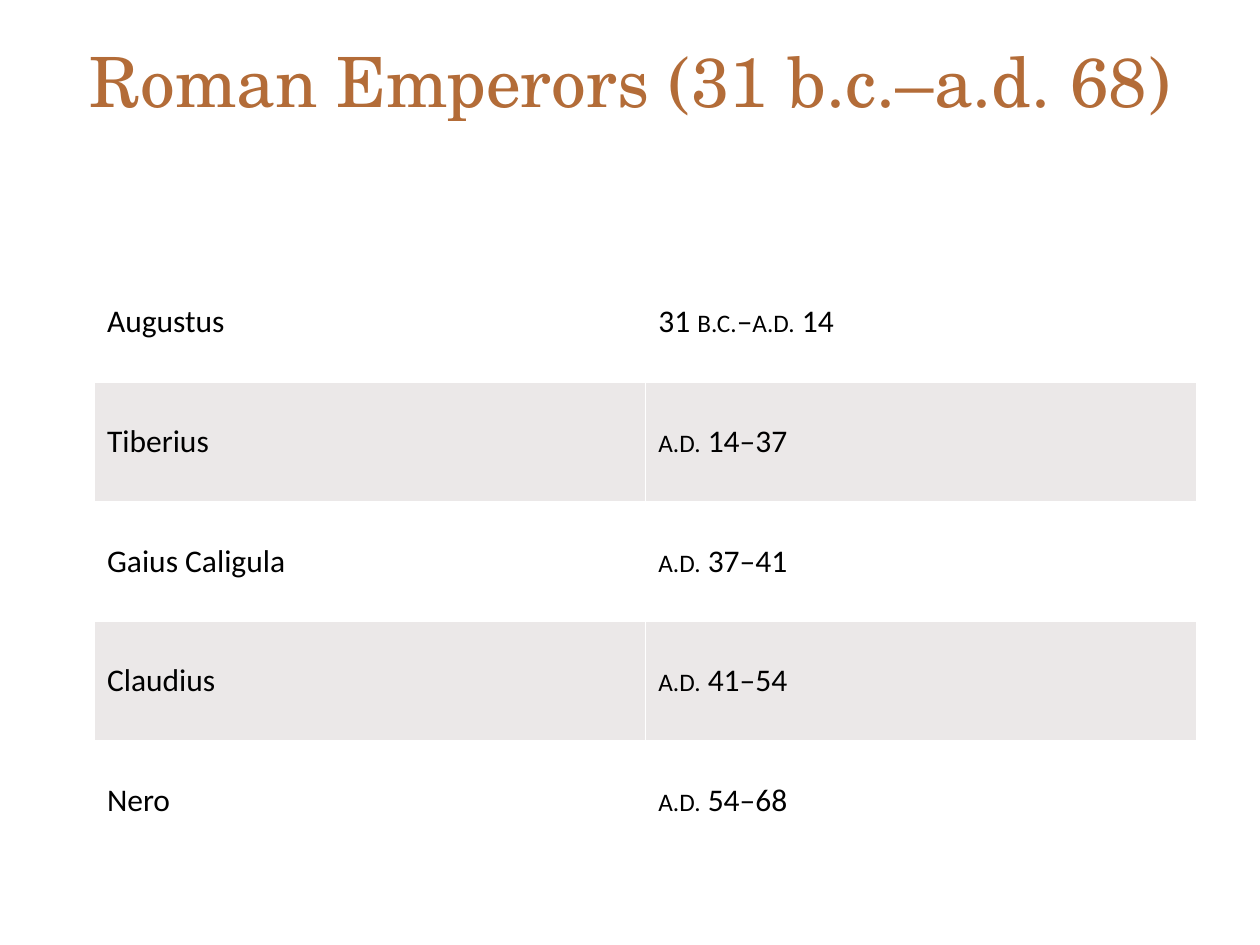
"""Build a slide listing the Roman emperors and their reigns."""
from dataclasses import dataclass

from pptx import Presentation
from pptx.dml.color import RGBColor
from pptx.enum import text
from pptx.util import Inches, Pt


@dataclass(frozen=True)
class Theme:
    title_font: str = "TeX Gyre Schola"
    body_font: str = "Calibri"
    title_size: float = 39.6
    body_size: float = 18
    title_color: str = "B36C38"
    body_color: str = "000000"
    bands: tuple[str, str] = ("FFFFFF", "EBE8E8")


@dataclass(frozen=True)
class Emperor:
    name: str
    reign: tuple[str, ...]


THEME = Theme()
ERAS = ("b.c.", "a.d.")
EMPERORS = (
    Emperor("Augustus", ("31 ", "b.c.", "–", "a.d.", " 14")),
    Emperor("Tiberius", ("a.d.", " 14–37")),
    Emperor("Gaius Caligula", ("a.d.", " 37–41")),
    Emperor("Claudius", ("a.d.", " 41–54")),
    Emperor("Nero", ("a.d.", " 54–68")),
)


def set_attrs(obj, values: dict) -> None:
    for name, value in values.items():
        setattr(obj, name, value)


def add_run(p, words: str, font: str, size: float, color: str) -> None:
    r = p.add_run()
    r.text = words
    set_attrs(r.font, {"name": font, "size": Pt(size)})
    r.font.color.rgb = RGBColor.from_string(color)
    if words in ERAS:
        r.font._element.set("cap", "small")


def add_title(slide, words: str) -> None:
    sp = slide.shapes.title
    set_attrs(sp, {"left": Inches(0.5), "top": Inches(0.3),
                   "width": Inches(9), "height": Inches(1.25)})
    tf = sp.text_frame
    set_attrs(tf, {"vertical_anchor": text.MSO_ANCHOR.TOP, "margin_top": 0,
                   "word_wrap": True, "auto_size": text.MSO_AUTO_SIZE.NONE})
    p = tf.paragraphs[0]
    p.alignment = text.PP_ALIGN.CENTER
    add_run(p, words, THEME.title_font, THEME.title_size, THEME.title_color)


def fill_cell(cell, parts: tuple[str, ...], band: str) -> None:
    cell.vertical_anchor = text.MSO_ANCHOR.MIDDLE
    cell.fill.solid()
    cell.fill.fore_color.rgb = RGBColor.from_string(band)
    for part in parts:
        add_run(cell.text_frame.paragraphs[0], part,
                THEME.body_font, THEME.body_size, THEME.body_color)


def add_emperors(slide, emperors: tuple[Emperor, ...]) -> None:
    table = slide.shapes.add_table(
        len(emperors), 2, Inches(0.75), Inches(2.08),
        Inches(8.75), Inches(0.95 * len(emperors))).table
    set_attrs(table, {"first_row": False, "horz_banding": False})
    for i, emperor in enumerate(emperors):
        for j, parts in enumerate(((emperor.name,), emperor.reign)):
            fill_cell(table.cell(i, j), parts, THEME.bands[i % 2])


def main() -> None:
    prs = Presentation()
    set_attrs(prs, {"slide_width": Inches(10), "slide_height": Inches(7.5)})
    slide = prs.slides.add_slide(prs.slide_layouts[5])
    add_title(slide, "Roman Emperors (31 b.c.–a.d. 68)")
    add_emperors(slide, EMPERORS)
    prs.save("out.pptx")


if __name__ == "__main__":
    main()
